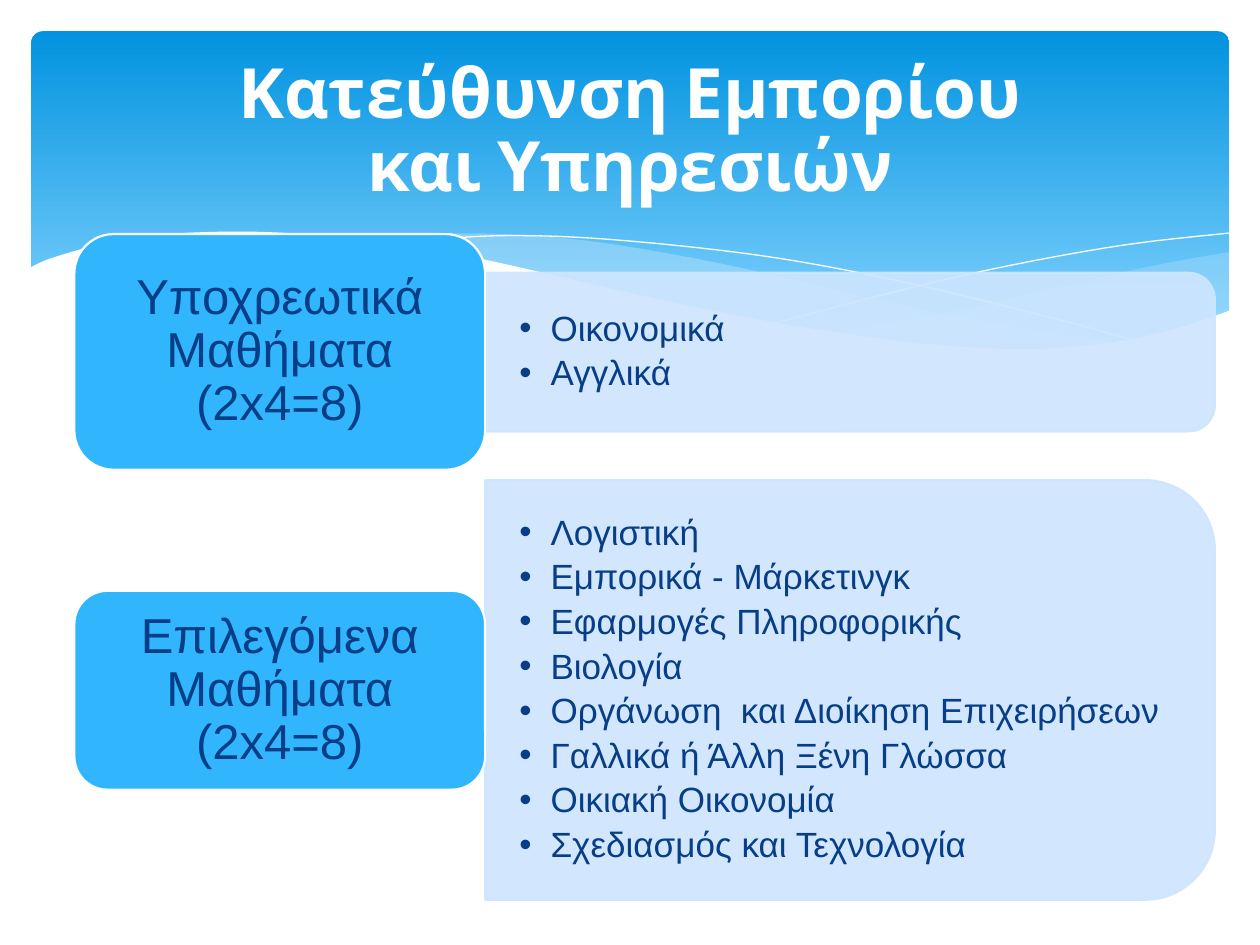
from lxml import etree
from pptx import Presentation
from pptx.dml.color import RGBColor
from pptx.enum.shapes import MSO_SHAPE
from pptx.enum.text import MSO_ANCHOR, PP_ALIGN
from pptx.oxml.ns import qn
from pptx.util import Cm, Pt

ROUND_RECT = MSO_SHAPE.ROUNDED_RECTANGLE
ROUND_TOP = MSO_SHAPE.ROUND_2_SAME_RECTANGLE
CENTER, LEFT = PP_ALIGN.CENTER, PP_ALIGN.LEFT
MIDDLE = MSO_ANCHOR.MIDDLE

WHITE = RGBColor(0xFF, 0xFF, 0xFF)
NAVY = RGBColor(0x07, 0x3E, 0x87)
SKY = RGBColor(0x31, 0xB6, 0xFD)
PALE = RGBColor(0xCE, 0xE5, 0xFE)
MIST = RGBColor(0xC6, 0xE7, 0xFC)
BANNER_TOP = RGBColor(0x02, 0x93, 0xE0)
BANNER_END = RGBColor(0x83, 0xD3, 0xFE)

# Wave outlines: points in centimetres, joined by smooth curves
RIGHT_WAVE = [
    [(24.78, 5.08), (23.75, 5.26), (22.63, 5.49), (21.13, 5.84), (19.13, 6.3), (16.79, 6.73)],
    [(16.79, 6.73), (18.26, 6.91), (19.53, 7.04), (20.93, 7.05), (22.38, 6.93),
     (23.57, 6.68), (24.78, 6.27)],
]
MIDDLE_WAVE = [
    [(22.68, 6.93), (20.5, 6.6), (17.93, 6.1), (15.57, 5.54), (13.74, 5.16),
     (11.81, 4.85), (10.13, 4.72), (8.74, 4.72), (7.26, 4.85)],
    [(7.26, 4.85), (9.19, 5.16), (11.4, 5.64), (13.46, 6.1), (15.7, 6.55),
     (17.65, 6.86), (19.33, 7.04), (20.78, 7.06), (22.68, 6.93)],
]
FALLING_LINE = [[(7.85, 4.95), (8.74, 4.83), (10.19, 4.75), (11.91, 4.8), (14.12, 5),
                 (16.15, 5.28), (18.47, 5.74), (21.11, 6.38), (23.04, 6.91)]]
RISING_LINE = [[(15.57, 6.53), (18.29, 5.82), (20.47, 5.33), (22.73, 4.93), (24.77, 4.7)]]
WHITE_WAVE = [
    [(24.82, 6.25), (23.62, 6.65), (22.23, 6.93), (20.55, 7.04), (18.44, 6.91),
     (15.9, 6.55), (13.44, 6.07), (11.35, 5.59), (9.27, 5.13), (7.42, 4.83),
     (5.84, 4.7), (4.5, 4.67), (3.02, 4.75), (1.93, 4.95), (1.02, 5.21), (0.58, 5.41)],
    [(0.58, 8.36), (24.82, 8.36)],
]

PANEL_X, PANEL_W = 9.78, 14.71
LABEL_X, LABEL_W = 1.5, 8.28
GROUPS = [  # label, label top and height, panel top and height, subjects
    ("Υποχρεωτικά Μαθήματα (2x4=8)", 4.72, 4.75, 5.5, 3.2, ["Οικονομικά", "Αγγλικά"]),
    ("Επιλεγόμενα Μαθήματα (2x4=8)", 11.91, 4.01, 9.68, 8.46, [
        "Λογιστική", "Εμπορικά - Μάρκετινγκ", "Εφαρμογές Πληροφορικής", "Βιολογία",
        "Οργάνωση  και Διοίκηση Επιχειρήσεων", "Γαλλικά ή Άλλη Ξένη Γλώσσα",
        "Οικιακή Οικονομία", "Σχεδιασμός και Τεχνολογία"]),
]


def smooth(points, steps=5):
    """Catmull-Rom curve through the points."""
    ends = [points[0], *points, points[-1]]
    curve = [points[0]]
    for a, b, c, d in zip(ends, ends[1:], ends[2:], ends[3:]):
        for i in range(1, steps + 1):
            t = i / steps
            curve.append(tuple(
                q + t / 2 * (r - p + t * (2 * p - 5 * q + 4 * r - s + t * (3 * (q - r) + s - p)))
                for p, q, r, s in zip(a, b, c, d)))
    return curve


def set_alpha(fill, percent):
    color = fill._xPr.find(qn("a:solidFill"))[0]
    etree.SubElement(color, qn("a:alpha"), val=str(percent * 1000))


class SlideBuilder:
    body_font = "Arial"
    title_font = "Cabin"

    def __init__(self, slide):
        self.slide = slide

    def shape(self, kind, x, y, w, h, fill=None, line=None, alpha=None):
        sp = self.slide.shapes.add_shape(kind, Cm(x), Cm(y), Cm(w), Cm(h))
        self.paint(sp, fill, line, 1.25, alpha)
        return sp

    def paint(self, sp, fill, line, width, alpha=None):
        sp.shadow.inherit = False
        for target, color in ((sp.fill, fill), (sp.line.fill, line)):
            if color is None:
                target.background()
                continue
            target.solid()
            target.fore_color.rgb = color
            if alpha:
                set_alpha(target, alpha)
        if line is not None:
            sp.line.width = Pt(width)

    def banner(self, x, y, w, h):
        sp = self.shape(ROUND_RECT, x, y, w, h)
        sp.adjustments[0] = 0.034
        sp.fill.gradient()
        sp.fill.gradient_angle = 270
        stops = zip(sp.fill.gradient_stops, (0, 0.9), (BANNER_TOP, BANNER_END))
        for stop, position, color in stops:
            stop.position = position
            stop.color.rgb = color

    def wave(self, curves, fill=None, line=None, alpha=None):
        points = [(Cm(x), Cm(y)) for curve in curves for x, y in smooth(curve)]
        builder = self.slide.shapes.build_freeform(*points[0])
        builder.add_line_segments(points[1:], close=fill is not None)
        self.paint(builder.convert_to_shape(), fill, line, 0, alpha)

    def panel(self, x, y, w, h):
        """Pale box rounded on its right side: a turned top-rounded rectangle."""
        sp = self.shape(ROUND_TOP, x + (w - h) / 2, y + (h - w) / 2, h, w, PALE, PALE, 90)
        sp.rotation = 90

    def text(self, x, y, w, h, lines, size, color=NAVY, font=body_font, bold=False,
             align=CENTER, spacing=0.9, inset=(0.3, 0.15), bullets=False):
        tf = self.slide.shapes.add_textbox(Cm(x), Cm(y), Cm(w), Cm(h)).text_frame
        tf.word_wrap = True
        tf.vertical_anchor = MIDDLE
        tf.margin_left = tf.margin_right = Cm(inset[0])
        tf.margin_top = tf.margin_bottom = Cm(inset[1])
        for i, line in enumerate(lines):
            p = tf.add_paragraph() if i else tf.paragraphs[0]
            p.text = line
            p.alignment = align
            p.line_spacing = spacing
            if bullets:
                p.space_after = Pt(3.9)
                self.bullet(p)
            for r in p.runs:
                r.font.name, r.font.size, r.font.bold = font, Pt(size), bold
                r.font.color.rgb = color

    def bullet(self, p):
        pPr = p._p.get_or_add_pPr()
        indent = Cm(0.63)
        pPr.set("marL", str(indent))
        pPr.set("indent", str(-indent))
        etree.SubElement(pPr, qn("a:buFont"), typeface=self.body_font)
        etree.SubElement(pPr, qn("a:buChar"), char="•")


def main():
    prs = Presentation()
    prs.slide_width, prs.slide_height = Cm(25.4), Cm(19.05)
    s = SlideBuilder(prs.slides.add_slide(prs.slide_layouts[6]))

    s.banner(0.63, 0.63, 24.15, 6.86)
    s.wave(RIGHT_WAVE, fill=MIST, alpha=29)
    s.wave(MIDDLE_WAVE, fill=MIST, alpha=40)
    s.wave(FALLING_LINE, line=WHITE)
    s.wave(RISING_LINE, line=WHITE)
    s.wave(WHITE_WAVE, fill=WHITE)
    s.text(1.27, 0.95, 22.86, 3.48, ["Κατεύθυνση Εμπορίου\vκαι Υπηρεσιών"], 39.6,
           color=WHITE, font=s.title_font, bold=True, spacing=0.88)

    for label, label_y, label_h, panel_y, panel_h, subjects in GROUPS:
        s.panel(PANEL_X, panel_y, PANEL_W, panel_h)
        s.text(PANEL_X, panel_y, PANEL_W, panel_h, subjects, 20, align=LEFT,
               inset=(0.69, 0.36), bullets=True)
        s.shape(ROUND_RECT, LABEL_X, label_y, LABEL_W, label_h, SKY, WHITE)
        s.text(LABEL_X + 0.23, label_y + 0.2, LABEL_W - 0.46, label_h - 0.4, [label], 28)

    prs.save("out.pptx")


if __name__ == "__main__":
    main()
